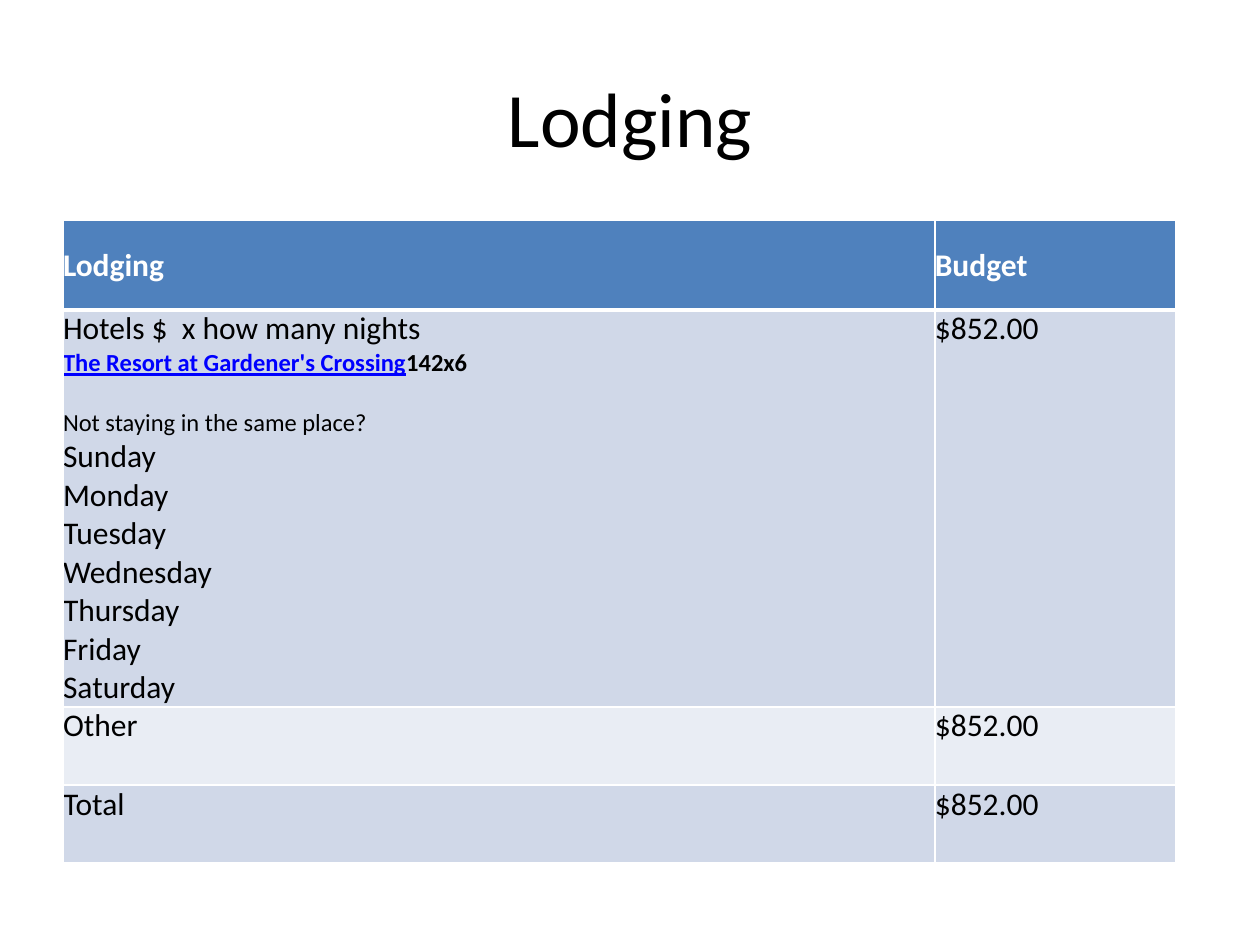
from lxml.etree import SubElement
from pptx import Presentation
from pptx.dml.color import RGBColor
from pptx.enum.text import MSO_ANCHOR, PP_ALIGN
from pptx.oxml.ns import qn
from pptx.util import Inches, Pt

COLORS = {"text": "000000", "white": "FFFFFF", "header": "4F81BD",
          "band": "D0D8E8", "light": "E9EDF4", "link": "0000FF"}
FONT = "Calibri"
DAYS = ["Sunday", "Monday", "Tuesday", "Wednesday", "Thursday", "Friday", "Saturday"]


def style(font, size, color, bold=False):
    font.name, font.size, font.bold = FONT, Pt(size), bold
    font.color.rgb = RGBColor.from_string(COLORS[color])


def add_border(cell, side, width):
    ln = SubElement(cell._tc.get_or_add_tcPr(), qn(f"a:{side}"), w=str(Pt(width)))
    fill = SubElement(ln, qn("a:solidFill"))
    SubElement(fill, qn("a:srgbClr"), val=COLORS["white"])


prs = Presentation()
prs.slide_width, prs.slide_height = Inches(10), Inches(7.5)
s = prs.slides.add_slide(prs.slide_layouts[5])

# Title
title = s.shapes.title
title.left, title.top = Inches(0.5), Inches(0.3)
title.width, title.height = Inches(9), Inches(1.25)
tf = title.text_frame
tf.text = "Lodging"
tf.vertical_anchor = MSO_ANCHOR.MIDDLE
p = tf.paragraphs[0]
p.alignment = PP_ALIGN.CENTER
style(p.font, 44, "text")

# Budget table
rows = [("Lodging", "Budget"),
        ("Hotels $  x how many nights", "$852.00"),
        ("Other", "$852.00"),
        ("Total", "$852.00")]
row_fills = ["header", "band", "light", "band"]
row_heights = [0.71, 3.11, 0.62, 0.62]
col_widths = [6.92, 1.91]

table = s.shapes.add_table(len(rows), len(col_widths), Inches(0.5), Inches(1.75),
                           Inches(sum(col_widths)), Inches(sum(row_heights))).table
for col, width in zip(table.columns, col_widths):
    col.width = Inches(width)

for i, values in enumerate(rows):
    table.rows[i].height = Inches(row_heights[i])
    header = i == 0
    for j, value in enumerate(values):
        cell = table.cell(i, j)
        cell.margin_left = cell.margin_right = cell.margin_top = cell.margin_bottom = 0
        cell.vertical_anchor = MSO_ANCHOR.MIDDLE if header else MSO_ANCHOR.TOP
        for side in ("lnL", "lnR", "lnT", "lnB"):
            thick = (header and side == "lnB") or (i == 1 and side == "lnT")
            add_border(cell, side, 3 if thick else 1)
        cell.fill.solid()
        cell.fill.fore_color.rgb = RGBColor.from_string(COLORS[row_fills[i]])
        cell.text = value
        style(cell.text_frame.paragraphs[0].font, 18, "white" if header else "text", header)

# Hotel details
tf = table.cell(1, 0).text_frame
p = tf.add_paragraph()
for text, color in [("The Resort at Gardener's Crossing", "link"), ("142x6", "text")]:
    r = p.add_run()
    r.text = text
    style(r.font, 14, color, bold=True)
    r.font.underline = color == "link"

p = tf.add_paragraph()
p.text = "Not staying in the same place?"
p.space_before = Pt(17)
style(p.font, 14, "text")

for day in DAYS:
    p = tf.add_paragraph()
    p.text = day
    style(p.font, 18, "text")

prs.save("out.pptx")
